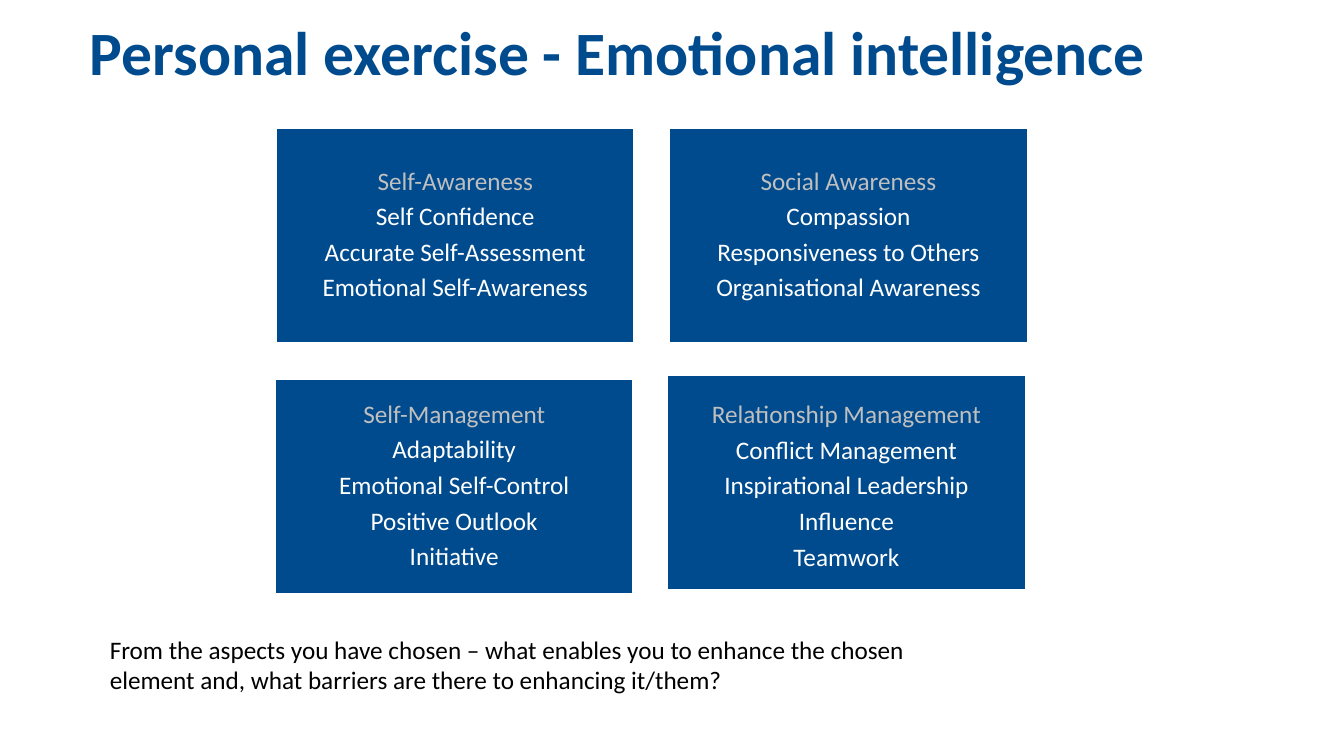
import pptx
import pptx.dml.color
import pptx.enum.shapes
import pptx.enum.text
import pptx.util

Inches = pptx.util.Inches
Pt = pptx.util.Pt
PP_ALIGN = pptx.enum.text.PP_ALIGN
MSO_ANCHOR = pptx.enum.text.MSO_ANCHOR

BLUE, GREY, WHITE, BLACK = "004B8E", "BFBFBF", "FFFFFF", "000000"
CARD_SIZE = (3.55, 2.13)

# left, top, extra top inset, heading, competencies
QUADRANTS = [
    (2.74, 1.27, 0, "Self-Awareness",
     ["Self Confidence", "Accurate Self-Assessment", "Emotional Self-Awareness"]),
    (6.64, 1.27, 0, "Social Awareness",
     ["Compassion", "Responsiveness to Others", "Organisational Awareness"]),
    (2.73, 3.76, 0, "Self-Management",
     ["Adaptability", "Emotional Self-Control", "Positive Outlook", "Initiative"]),
    (6.62, 3.72, 0.09, "Relationship Management",
     ["Conflict Management", "Inspirational Leadership", "Influence", "Teamwork"]),
]


def rgb(colour):
    return pptx.dml.color.RGBColor.from_string(colour)


def apply(target, values):
    """Set each attribute of target named in values."""
    for name, value in values.items():
        setattr(target, name, value)


def write(paragraph, text, size, colour, bold=False, **layout):
    """Fill a paragraph with one run; layout holds paragraph attributes."""
    apply(paragraph, layout)
    run = paragraph.add_run()
    run.text = text
    apply(run.font, {"name": "Calibri", "size": Pt(size), "bold": bold})
    run.font.color.rgb = rgb(colour)


def place_title(slide, box, text):
    title = slide.shapes.title
    apply(title, dict(zip(("left", "top", "width", "height"), map(Inches, box))))
    apply(title.text_frame, {
        "word_wrap": True,
        "vertical_anchor": MSO_ANCHOR.MIDDLE,
        "auto_size": pptx.enum.text.MSO_AUTO_SIZE.NONE,
    })
    write(title.text_frame.paragraphs[0], text, 44, BLUE, bold=True,
          alignment=PP_ALIGN.LEFT, line_spacing=0.9)


def add_quadrant(slide, box, extra_top, heading, competencies):
    card = slide.shapes.add_shape(
        pptx.enum.shapes.MSO_SHAPE.RECTANGLE, *map(Inches, box))
    card.shadow.inherit = False
    card.fill.solid()
    card.fill.fore_color.rgb = rgb(BLUE)
    card.line.color.rgb = rgb(WHITE)
    card.line.width = Pt(1)

    frame = card.text_frame
    inset = Inches(0.07)
    apply(frame, {
        "word_wrap": True,
        "vertical_anchor": MSO_ANCHOR.MIDDLE,
        "margin_left": inset,
        "margin_right": inset,
        "margin_top": inset + Inches(extra_top),
        "margin_bottom": inset,
    })
    for index, entry in enumerate([heading, *competencies]):
        paragraph = frame.add_paragraph() if index else frame.paragraphs[0]
        write(paragraph, entry, 18, WHITE if index else GREY,
              alignment=PP_ALIGN.CENTER, line_spacing=0.9, space_after=Pt(6))


def add_question(slide, box, text):
    question = slide.shapes.add_textbox(*map(Inches, box))
    question.text_frame.word_wrap = True
    write(question.text_frame.paragraphs[0], text, 18, BLACK)


def main():
    deck = pptx.Presentation()
    apply(deck, {"slide_width": Inches(13.33), "slide_height": Inches(7.5)})
    slide = deck.slides.add_slide(deck.slide_layouts.get_by_name("Title Only"))
    place_title(slide, (0.79, 0.16, 11.75, 0.78),
                "Personal exercise - Emotional intelligence")
    for left, top, extra_top, heading, competencies in QUADRANTS:
        add_quadrant(slide, (left, top, *CARD_SIZE), extra_top, heading, competencies)
    add_question(slide, (0.99, 6.24, 8.29, 0.71),
                 "From the aspects you have chosen – what enables you to enhance "
                 "the chosen element and, what barriers are there to enhancing it/them?")
    deck.save("out.pptx")


if __name__ == "__main__":
    main()
